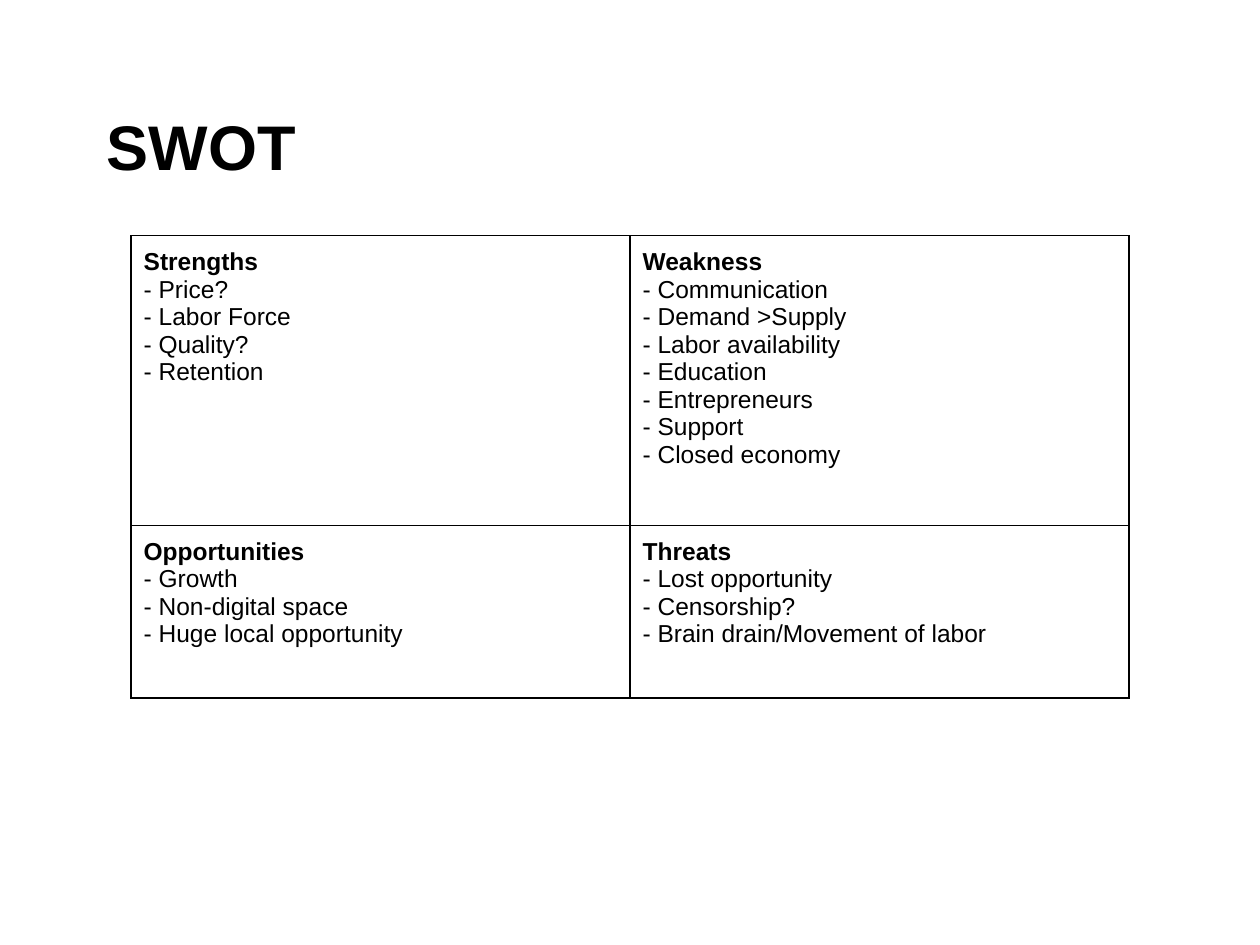
from lxml import etree
from pptx import Presentation
from pptx import util as u
from pptx.dml.color import RGBColor
from pptx.enum import text
from pptx.oxml.ns import qn

BLACK = RGBColor(0x00, 0x00, 0x00)
FONT = "Arial"
MARGIN = u.Inches(0.1)

QUADRANTS = [
    [
        ("Strengths", ["Price?", "Labor Force", "Quality?", "Retention"]),
        ("Weakness", ["Communication", "Demand >Supply", "Labor availability",
                      "Education", "Entrepreneurs", "Support", "Closed economy"]),
    ],
    [
        ("Opportunities", ["Growth", "Non-digital space", "Huge local opportunity"]),
        ("Threats", ["Lost opportunity", "Censorship?",
                     "Brain drain/Movement of labor"]),
    ],
]
ROW_HEIGHTS = [u.Inches(2.3), u.Inches(1.37)]


def add_run(paragraph, words, size, bold=False):
    run = paragraph.add_run()
    run.text = words
    run.font.name = FONT
    run.font.size = u.Pt(size)
    run.font.bold = bold
    run.font.color.rgb = BLACK


def set_margins(holder):
    holder.margin_left = holder.margin_right = MARGIN
    holder.margin_top = holder.margin_bottom = MARGIN


def set_borders(cell):
    properties = cell._tc.get_or_add_tcPr()
    for position, side in enumerate(("a:lnL", "a:lnR", "a:lnT", "a:lnB")):
        line = etree.Element(qn(side), w=str(u.Pt(0.75)))
        fill = etree.SubElement(line, qn("a:solidFill"))
        etree.SubElement(fill, qn("a:srgbClr"), val=str(BLACK))
        properties.insert(position, line)


def add_title(slide, left, top, width, height):
    frame = slide.shapes.add_textbox(left, top, width, height).text_frame
    frame.word_wrap = True
    frame.vertical_anchor = text.MSO_ANCHOR.BOTTOM
    set_margins(frame)
    paragraph = frame.paragraphs[0]
    paragraph._p.get_or_add_pPr().set("indent", str(u.Inches(0.25)))
    add_run(paragraph, "SWOT", 36, bold=True)


def fill_quadrant(cell, heading, points):
    cell.fill.background()
    set_borders(cell)
    set_margins(cell)
    frame = cell.text_frame
    add_run(frame.paragraphs[0], heading, 14, bold=True)
    for point in points:
        add_run(frame.add_paragraph(), f"- {point}", 14)


def add_swot_table(slide, left, top, width, height):
    table = slide.shapes.add_table(2, 2, left, top, width, height).table
    table.first_row = table.horz_banding = False
    for row, row_height, quadrants in zip(table.rows, ROW_HEIGHTS, QUADRANTS):
        row.height = row_height
        for cell, (heading, points) in zip(row.cells, quadrants):
            fill_quadrant(cell, heading, points)


def main():
    presentation = Presentation()
    presentation.slide_width = u.Inches(10)
    presentation.slide_height = u.Inches(7.5)
    slide = presentation.slides.add_slide(presentation.slide_layouts[6])

    # Heading
    add_title(slide, u.Inches(0.5), u.Inches(0.3), u.Inches(9), u.Inches(1.25))
    # Four quadrants
    add_swot_table(slide, u.Inches(1.04), u.Inches(1.87),
                   u.Inches(7.92), sum(ROW_HEIGHTS))

    presentation.save("out.pptx")


if __name__ == "__main__":
    main()
